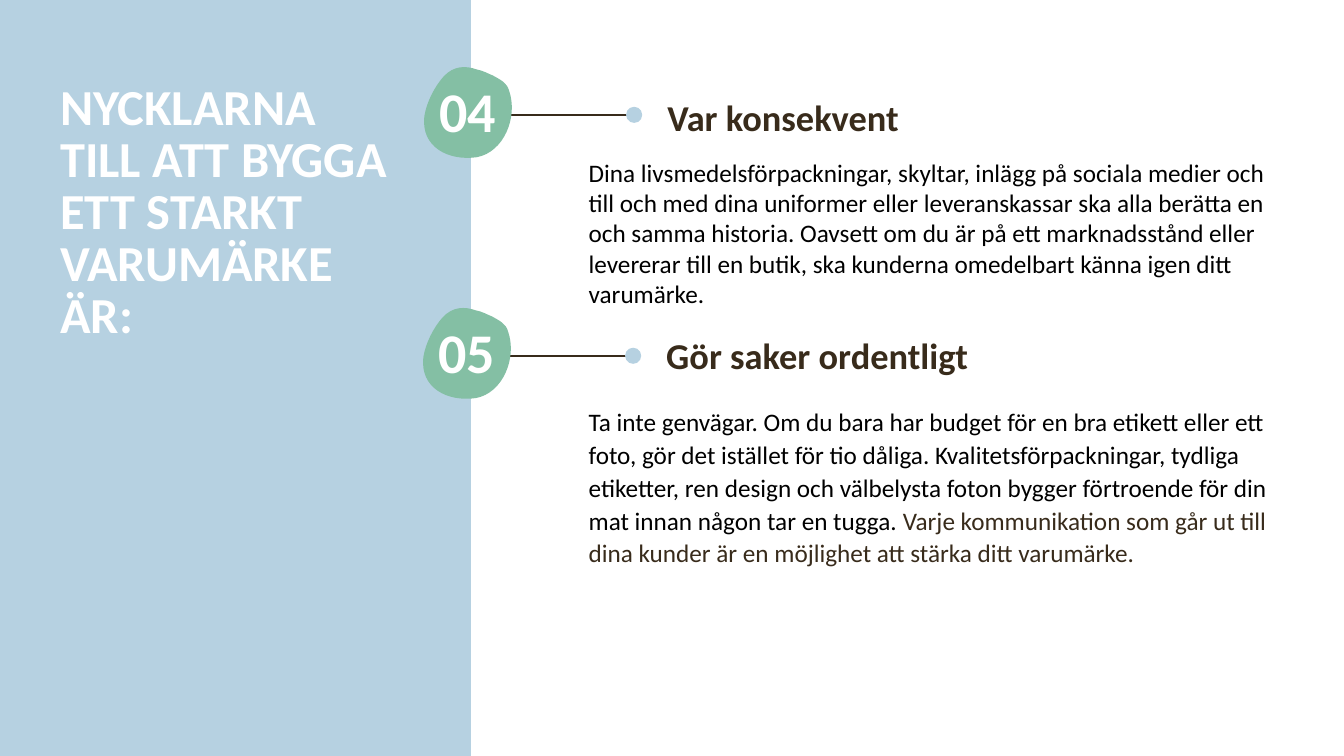
import pptx
import pptx.util
import pptx.dml.color
import pptx.enum.shapes
import pptx.enum.text
import pptx.oxml

COLUMNS, ROWS = 13.33, 7.5
BLUE, GREEN, BROWN, WHITE, BLACK = "B6D1E1", "84BFA4", "382B1B", "FFFFFF", "000000"
NAMESPACE = 'xmlns:a="http://schemas.openxmlformats.org/drawingml/2006/main"'

presentation = pptx.Presentation()
presentation.slide_width = pptx.util.Inches(COLUMNS)
presentation.slide_height = pptx.util.Inches(ROWS)
column = presentation.slide_width / COLUMNS
row = presentation.slide_height / ROWS
slide = presentation.slides.add_slide(presentation.slide_layouts[6])
shapes = slide.shapes


def paint(target, color):
    """Give a shape a plain fill, or a font or line its colour, from a hex string."""
    rgb = pptx.dml.color.RGBColor.from_string(color)
    if hasattr(target, "shadow"):
        target.fill.solid()
        target.fill.fore_color.rgb = rgb
        target.line.fill.background()
        target.shadow.inherit = False
    else:
        target.color.rgb = rgb


def add_text(left, top, width, height, runs, size, bold=False, spacing=None):
    """Add a wrapped text box of (text, colour) runs and return its paragraph."""
    box = shapes.add_textbox(
        round(left * column), round(top * row), round(width * column), round(height * row))
    box.text_frame.word_wrap = True
    paragraph = box.text_frame.paragraphs[0]
    if spacing:
        paragraph.line_spacing = spacing
    for text, color in runs:
        run = paragraph.add_run()
        run.text = text
        run.font.name = "Calibri"
        run.font.size = pptx.util.Pt(size)
        run.font.bold = bold
        paint(run.font, color)
    return paragraph


panel = shapes.add_shape(
    pptx.enum.shapes.MSO_SHAPE.RECTANGLE, 0, 0, round(4.67 * column), presentation.slide_height)
paint(panel, BLUE)
add_text(0.5, 0.78, 3.51, 2.18,
         [("NYCKLARNA TILL ATT BYGGA ETT STARKT VARUMÄRKE ÄR:", WHITE)],
         36, True, pptx.util.Pt(37.2))

# Badge outline in hundredths of a column and row, as Bézier segments from the start
badge_width, badge_height = 87, 90
badge_start = (52, 2)
badge_curves = [
    ((41, -2), (29, -2), (19, 9)),
    ((10, 19), (2, 35), (0, 48)),
    ((-4, 79), (24, 93), (52, 89)),
    ((79, 84), (93, 49), (84, 23)),
    ((82, 15), (75, 12), (68, 8)),
    ((63, 6), (58, 3), (52, 2)),
]

# Number, badge left and top, heading top, heading
keys = [
    ("04", 4.21, 0.67, 0.89, "Var konsekvent"),
    ("05", 4.20, 3.06, 3.26, "Gör saker ordentligt"),
]
for number, left, top, heading_top, heading in keys:
    middle = round((top + 0.47) * row)
    connector = shapes.add_connector(
        pptx.enum.shapes.MSO_CONNECTOR.STRAIGHT,
        round((left + 2.05) * column), middle, round((left + 0.72) * column), middle)
    connector.line.width = pptx.util.Pt(1.5)
    paint(connector.line, BROWN)
    connector._element.spPr.append(pptx.oxml.parse_xml(f"<a:effectLst {NAMESPACE}/>"))

    dot = shapes.add_shape(
        pptx.enum.shapes.MSO_SHAPE.OVAL, round((left + 2) * column),
        round((top + 0.39) * row), round(0.16 * column), round(0.16 * row))
    paint(dot, BLUE)

    builder = shapes.build_freeform(*badge_start, scale=(column / 100, row / 100))
    builder.add_line_segments([curve[-1] for curve in badge_curves], close=True)
    badge = builder.convert_to_shape(round(left * column), round(top * row))
    badge.left, badge.top = round(left * column), round(top * row)
    badge.width = round(badge_width * column / 100)
    badge.height = round(badge_height * row / 100)
    paint(badge, GREEN)

    # The straight sides become curves
    outline = badge._element.xpath(".//a:path")[0]
    outline.set("w", str(badge_width))
    outline.set("h", str(badge_height))
    start = outline.xpath("./a:moveTo/a:pt")[0]
    start.set("x", str(badge_start[0]))
    start.set("y", str(badge_start[1]))
    for side, curve in zip(outline.xpath("./a:lnTo"), badge_curves):
        points = "".join(f'<a:pt x="{x}" y="{y}"/>' for x, y in curve)
        outline.replace(side, pptx.oxml.parse_xml(
            f"<a:cubicBezTo {NAMESPACE}>{points}</a:cubicBezTo>"))

    label = add_text(left - 0.06, top + 0.12, 0.98, 0.59, [(number, WHITE)], 40, True, 0.9)
    label.alignment = pptx.enum.text.PP_ALIGN.CENTER
    add_text(left + 2.31, heading_top, 6.67, 0.54, [(heading, BROWN)], 26, True)

add_text(5.74, 1.51, 7.16, 1.62, [(
    "Dina livsmedelsförpackningar, skyltar, inlägg på sociala medier och till och med dina "
    "uniformer eller leveranskassar ska alla berätta en och samma historia. Oavsett om du är "
    "på ett marknadsstånd eller levererar till en butik, ska kunderna omedelbart känna igen "
    "ditt varumärke.", BLACK)], 18)
add_text(5.74, 3.96, 7.16, 2.91, [
    ("Ta inte genvägar. Om du bara har budget för en bra etikett eller ett foto, gör det "
     "istället för tio dåliga. Kvalitetsförpackningar, tydliga etiketter, ren design och "
     "välbelysta foton bygger förtroende för din mat innan någon tar en tugga. ", BLACK),
    ("Varje kommunikation som går ut till dina kunder är en möjlighet att stärka ditt "
     "varumärke.", BROWN)], 18, spacing=pptx.util.Pt(23.4))

presentation.save("out.pptx")
